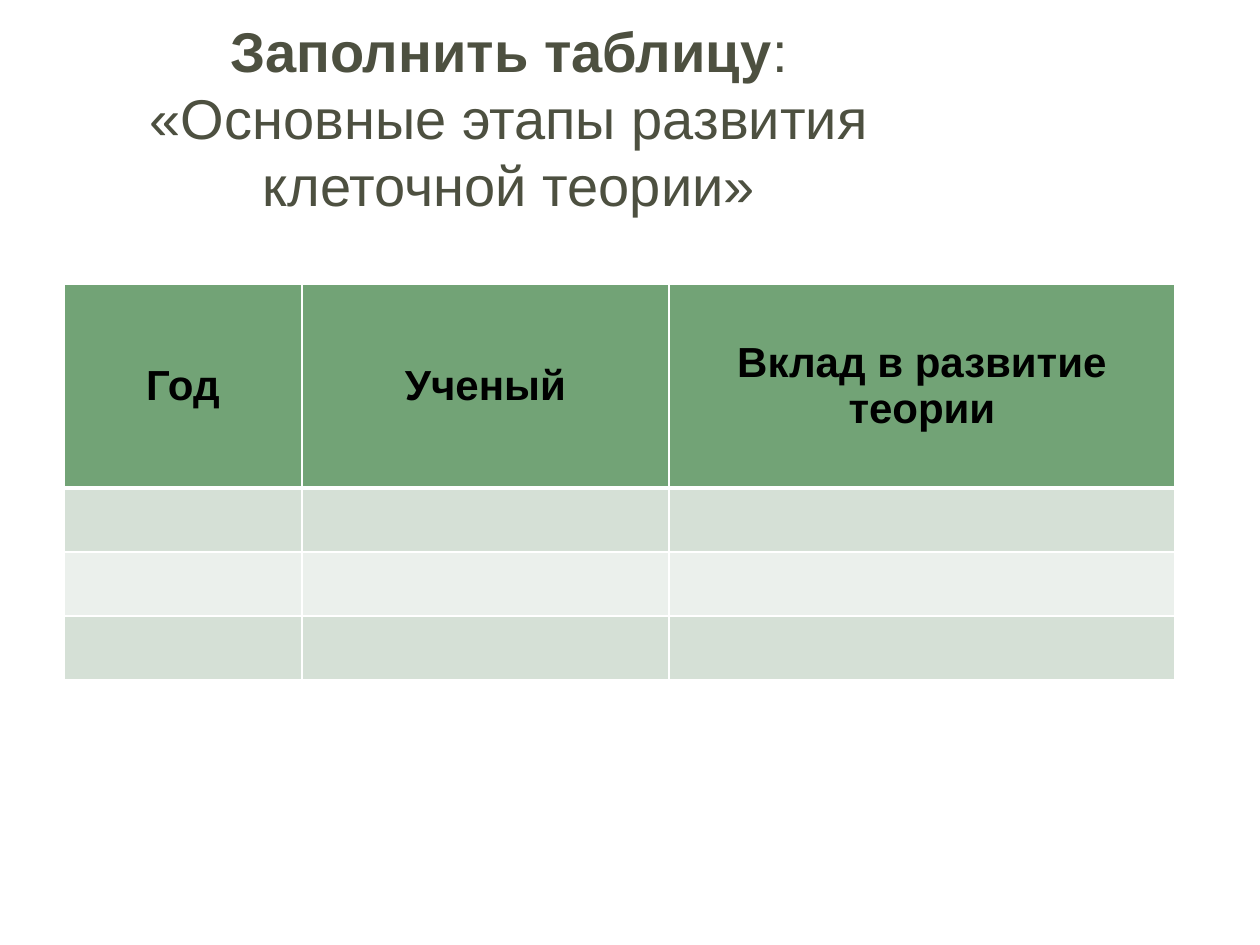
from lxml import etree
from pptx import Presentation
from pptx.dml.color import RGBColor
from pptx.enum.text import MSO_ANCHOR, PP_ALIGN
from pptx.oxml.ns import qn
from pptx.util import Emu, Pt

CENTER = PP_ALIGN.CENTER
MIDDLE = MSO_ANCHOR.MIDDLE
FONT = "Arial"
PIXELS_PER_INCH = 126
COLORS = {
    "title": "4D5040",
    "header_text": "000000",
    "header": "72A376",
    "odd_row": "D5E0D6",
    "even_row": "EBF0EC",
    "border": "FFFFFF",
}
HEADERS = ["Год", "Ученый", "Вклад в развитие теории"]
COLUMN_WIDTHS = [238, 367, 506]
ROW_HEIGHTS = [204, 64, 64, 64]


def px(length):
    """Turn pixels into EMU."""
    return Emu(round(length * 914400 / PIXELS_PER_INCH))


def style_paragraph(paragraph, size, color):
    """Center a paragraph and set its font."""
    paragraph.alignment = CENTER
    paragraph.font.name = FONT
    paragraph.font.size = Pt(size)
    paragraph.font.color.rgb = RGBColor.from_string(COLORS[color])


def set_borders(cell, bottom_width):
    """Give a cell white borders, with its own width at the bottom."""
    properties = cell._tc.get_or_add_tcPr()
    for side, width in (("L", 1), ("R", 1), ("T", 1), ("B", bottom_width)):
        line = etree.SubElement(properties, qn(f"a:ln{side}"), w=str(Pt(width)))
        fill = etree.SubElement(line, qn("a:solidFill"))
        etree.SubElement(fill, qn("a:srgbClr"), val=COLORS["border"])


def add_title(slide, left, top, width, height):
    """Add the heading with its bold opening words."""
    shape = slide.shapes.add_textbox(px(left), px(top), px(width), px(height))
    frame = shape.text_frame
    frame.word_wrap = True
    frame.vertical_anchor = MIDDLE
    paragraph = frame.paragraphs[0]
    style_paragraph(paragraph, 32, "title")
    task = paragraph.add_run()
    task.text = "Заполнить таблицу"
    task.font.bold = True
    paragraph.add_run().text = ":"
    paragraph.add_line_break()
    paragraph.add_run().text = "«Основные этапы развития клеточной теории»"


def add_stages_table(slide, left, top):
    """Add the table with a header row and empty banded rows to fill in."""
    shape = slide.shapes.add_table(
        len(ROW_HEIGHTS), len(COLUMN_WIDTHS), px(left), px(top),
        px(sum(COLUMN_WIDTHS)), px(sum(ROW_HEIGHTS)))
    table = shape.table
    for column, width in zip(table.columns, COLUMN_WIDTHS):
        column.width = px(width)
    for index, (row, height) in enumerate(zip(table.rows, ROW_HEIGHTS)):
        row.height = px(height)
        band = "odd_row" if index % 2 else "even_row"
        for cell in row.cells:
            set_borders(cell, 1 if index else 3)
            cell.fill.solid()
            cell.fill.fore_color.rgb = RGBColor.from_string(COLORS[band if index else "header"])
    for cell, header in zip(table.rows[0].cells, HEADERS):
        cell.text = header
        cell.vertical_anchor = MIDDLE
        paragraph = cell.text_frame.paragraphs[0]
        style_paragraph(paragraph, 24, "header_text")
        paragraph.font.bold = True


def main():
    """Build and save the slide."""
    presentation = Presentation()
    presentation.slide_width = px(1260)
    presentation.slide_height = px(945)
    slide = presentation.slides.add_slide(presentation.slide_layouts[6])
    add_title(slide, 63, 38, 892, 158)
    add_stages_table(slide, 64, 284)
    presentation.save("out.pptx")


if __name__ == "__main__":
    main()
